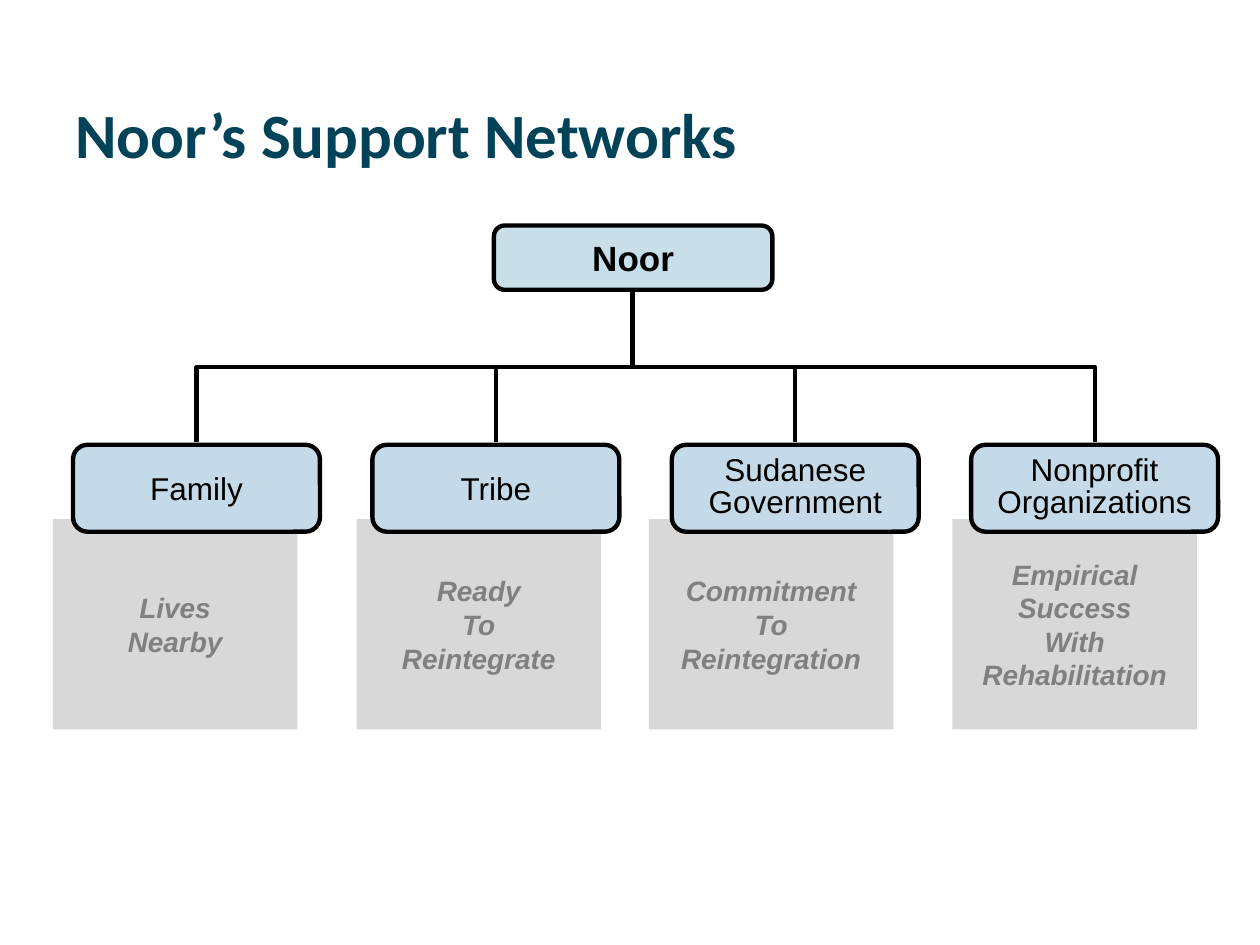
from lxml import etree
from pptx import Presentation
from pptx.dml.color import RGBColor
from pptx.enum.shapes import MSO_CONNECTOR as Link, MSO_SHAPE as Shape
from pptx.enum.text import MSO_ANCHOR as Anchor, PP_ALIGN as Align
from pptx.oxml.ns import qn
from pptx.util import Inches, Pt

TITLE = "Noor’s Support Networks"
ROOT = "Noor"
NETWORKS = [
    {"name": ["Family"], "detail": ["Lives", "Nearby"], "card_left": 0.42},
    {"name": ["Tribe"], "detail": ["Ready", "To", "Reintegrate"], "card_left": 2.83},
    {"name": ["Sudanese", "Government"],
     "detail": ["Commitment", "To", "Reintegration"], "card_left": 5.15},
    {"name": ["Nonprofit", "Organizations"],
     "detail": ["Empirical", "Success", "With", "Rehabilitation"], "card_left": 7.56},
]
COLORS = {"title": "004359", "root": "C8DFEA", "network": "C5DAE9",
          "card": "B2B2B2", "detail": "808080", "ink": "000000"}

NAME_LEFT, NAME_STEP, NAME_WIDTH = 0.58, 2.376, 1.96
TRUNK_X, TRUNK_TOP, BRANCH_BOTTOM = 5.02, 2.32, 3.51


def color(name):
    return RGBColor.from_string(COLORS[name])


def write(shape, lines, size, ink, font="Arial", bold=False, italic=False,
          align=Align.CENTER, anchor=Anchor.MIDDLE, spacing=None, wrap=False):
    frame = shape.text_frame
    frame.word_wrap = wrap
    frame.vertical_anchor = anchor
    for index, line in enumerate(lines):
        para = frame.add_paragraph() if index else frame.paragraphs[0]
        para.alignment = align
        para.line_spacing = spacing
        span = para.add_run()
        span.text = line
        span.font.name = font
        span.font.size = Pt(size)
        span.font.bold = bold
        span.font.italic = italic
        span.font.color.rgb = color(ink)


def add_box(slide, kind, bounds, fill, outlined=True):
    box = slide.shapes.add_shape(kind, *map(Inches, bounds))
    box.shadow.inherit = False
    box.fill.solid()
    box.fill.fore_color.rgb = color(fill)
    if outlined:
        box.line.color.rgb = color("ink")
        box.line.width = Pt(2.5)
    else:
        box.line.fill.background()
    return box


def add_card(slide, left, lines):
    card = add_box(slide, Shape.RECTANGLE, (left, 4.12, 1.94, 1.67), "card", outlined=False)
    tint = card.fill._xPr.find(qn("a:solidFill"))[0]
    etree.SubElement(tint, qn("a:alpha")).set("val", "50000")
    write(card, lines, 16, "detail", bold=True, italic=True)


def add_branch(slide, target_x):
    middle_x = (TRUNK_X + target_x) / 2
    middle_y = (TRUNK_TOP + BRANCH_BOTTOM) / 2
    half_drop = (BRANCH_BOTTOM - TRUNK_TOP) / 2
    half_span = abs(target_x - TRUNK_X) / 2
    side = 1 if target_x > TRUNK_X else -1
    branch = slide.shapes.add_connector(
        Link.ELBOW,
        Inches(middle_x + side * half_drop), Inches(middle_y - half_span),
        Inches(middle_x - side * half_drop), Inches(middle_y + half_span))
    branch.line.color.rgb = color("ink")
    branch.line.width = Pt(2.5)
    properties = branch._element.spPr
    quarter_turns = 3 if side > 0 else 1
    properties.find(qn("a:xfrm")).set("rot", str(quarter_turns * 90 * 60000))
    etree.SubElement(properties, qn("a:effectLst"))


def main():
    deck = Presentation()
    deck.slide_width, deck.slide_height = Inches(10), Inches(7.5)
    slide = deck.slides.add_slide(deck.slide_layouts[6])

    title = slide.shapes.add_textbox(*map(Inches, (0.5, 0.59, 9, 0.82)))
    write(title, [TITLE], 36, "title", font="Calibri", bold=True, align=Align.LEFT,
          anchor=Anchor.BOTTOM, spacing=Pt(38), wrap=True)

    root = add_box(slide, Shape.ROUNDED_RECTANGLE, (3.92, 1.79, 2.21, 0.51), "root")
    write(root, [ROOT], 20, "ink", bold=True)

    for index, network in enumerate(NETWORKS):
        left = NAME_LEFT + index * NAME_STEP
        add_card(slide, network["card_left"], network["detail"])
        label = add_box(slide, Shape.ROUNDED_RECTANGLE, (left, 3.53, NAME_WIDTH, 0.69), "network")
        spacing = 0.85 if len(network["name"]) > 1 else None
        write(label, network["name"], 18, "ink", spacing=spacing)
        add_branch(slide, left + NAME_WIDTH / 2)

    deck.save("out.pptx")


if __name__ == "__main__":
    main()
